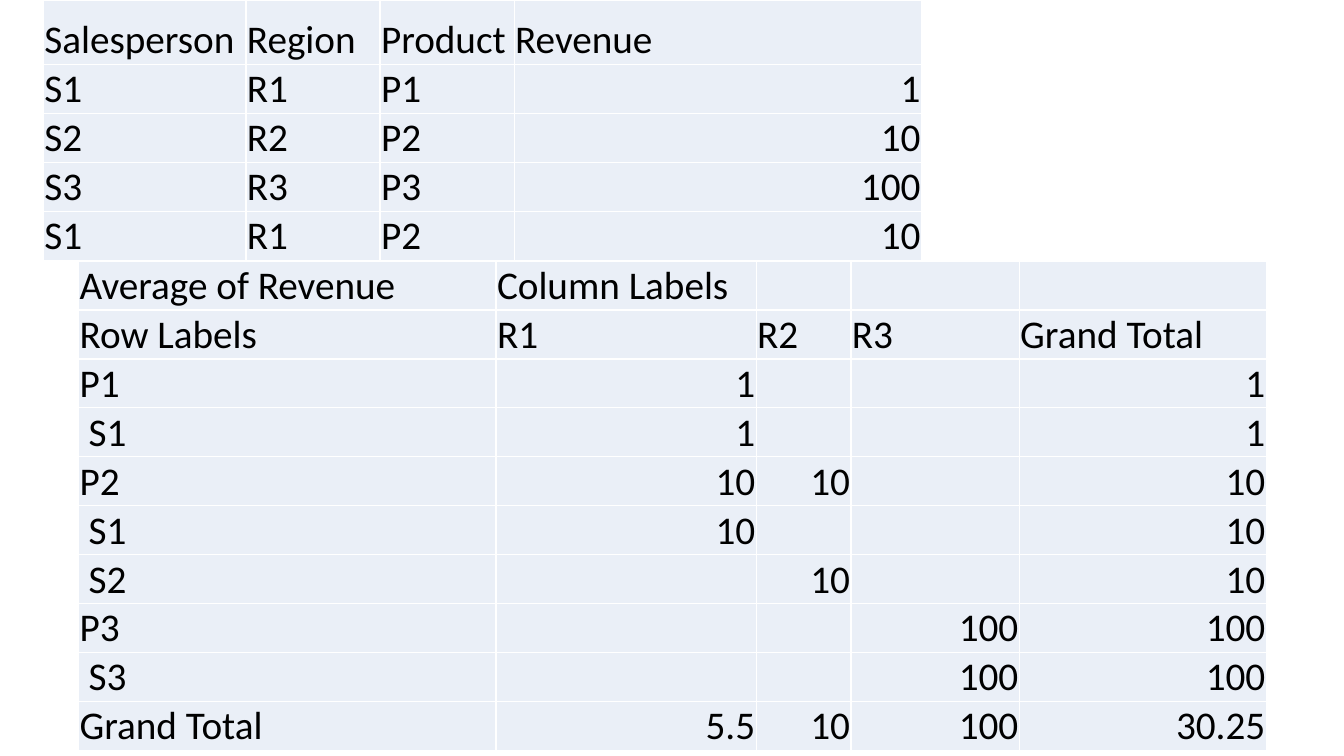
import pptx
import pptx.util
import pptx.dml.color
import pptx.enum.text
import pptx.oxml
from dataclasses import dataclass

# Numbers align right, None leaves a cell blank.
SALES = dict(
    left=43, top=0, cols=[201, 133, 133, 404], head=64, row=42, nested=(),
    rows=[
        ("Salesperson", "Region", "Product", "Revenue"),
        ("S1", "R1", "P1", 1),
        ("S2", "R2", "P2", 10),
        ("S3", "R3", "P3", 100),
        ("S1", "R1", "P2", 10),
    ])
PIVOT = dict(
    left=78, top=259, cols=[414, 258, 94, 167, 245], head=43, row=38,
    nested=("S1", "S2", "S3"),
    rows=[
        ("Average of Revenue", "Column Labels", None, None, None),
        ("Row Labels", "R1", "R2", "R3", "Grand Total"),
        ("P1", 1, None, None, 1),
        ("S1", 1, None, None, 1),
        ("P2", 10, 10, None, 10),
        ("S1", 10, None, None, 10),
        ("S2", None, 10, None, 10),
        ("P3", None, None, 100, 100),
        ("S3", None, None, 100, 100),
        ("Grand Total", 5.5, 10, 100, 30.25),
    ])


@dataclass
class Theme:
    font: str = "Calibri"
    size: int = 28
    ink: str = "000000"
    fill: str = "EAEFF7"
    rule: str = "FFFFFF"
    inset: int = 1
    indent: int = 10


THEME = Theme()
RGB = pptx.dml.color.RGBColor.from_string
Pt = pptx.util.Pt


def px(n):
    """Turn px, 100 to the inch, into EMU."""
    return pptx.util.Emu(n * 9144)


def border(cell):
    props = cell._tc.get_or_add_tcPr()
    for side in "LRTB":
        props.append(pptx.oxml.parse_xml(
            f'<a:ln{side} xmlns:a="http://schemas.openxmlformats.org/drawingml/2006/main"'
            f' w="{Pt(1)}"><a:solidFill><a:srgbClr val="{THEME.rule}"/>'
            f'</a:solidFill></a:ln{side}>'))


def fill_cell(cell, value, nested):
    border(cell)
    cell.fill.solid()
    cell.fill.fore_color.rgb = RGB(THEME.fill)
    cell.vertical_anchor = pptx.enum.text.MSO_ANCHOR.BOTTOM
    cell.margin_left = px(THEME.indent if nested else THEME.inset)
    cell.margin_right = cell.margin_top = px(THEME.inset)
    cell.margin_bottom = 0
    if value is None:
        return
    para = cell.text_frame.paragraphs[0]
    para.text = str(value)
    if not isinstance(value, str):
        para.alignment = pptx.enum.text.PP_ALIGN.RIGHT
    font = para.runs[0].font
    font.name, font.size = THEME.font, Pt(THEME.size)
    font.color.rgb = RGB(THEME.ink)


def add_grid(slide, left, top, cols, head, row, nested, rows):
    tall = head + row * (len(rows) - 1)
    table = slide.shapes.add_table(
        len(rows), len(cols), px(left), px(top), px(sum(cols)), px(tall)).table
    table.first_row = table.horz_banding = False
    for col, wide in zip(table.columns, cols):
        col.width = px(wide)
    for r, values in enumerate(rows):
        table.rows[r].height = px(row if r else head)
        for c, value in enumerate(values):
            fill_cell(table.cell(r, c), value, c == 0 and value in nested)


def main():
    deck = pptx.Presentation()
    deck.slide_width, deck.slide_height = px(1333), px(750)
    slide = deck.slides.add_slide(deck.slide_layouts[6])
    for grid in (SALES, PIVOT):
        add_grid(slide, **grid)
    deck.save("out.pptx")


if __name__ == "__main__":
    main()
